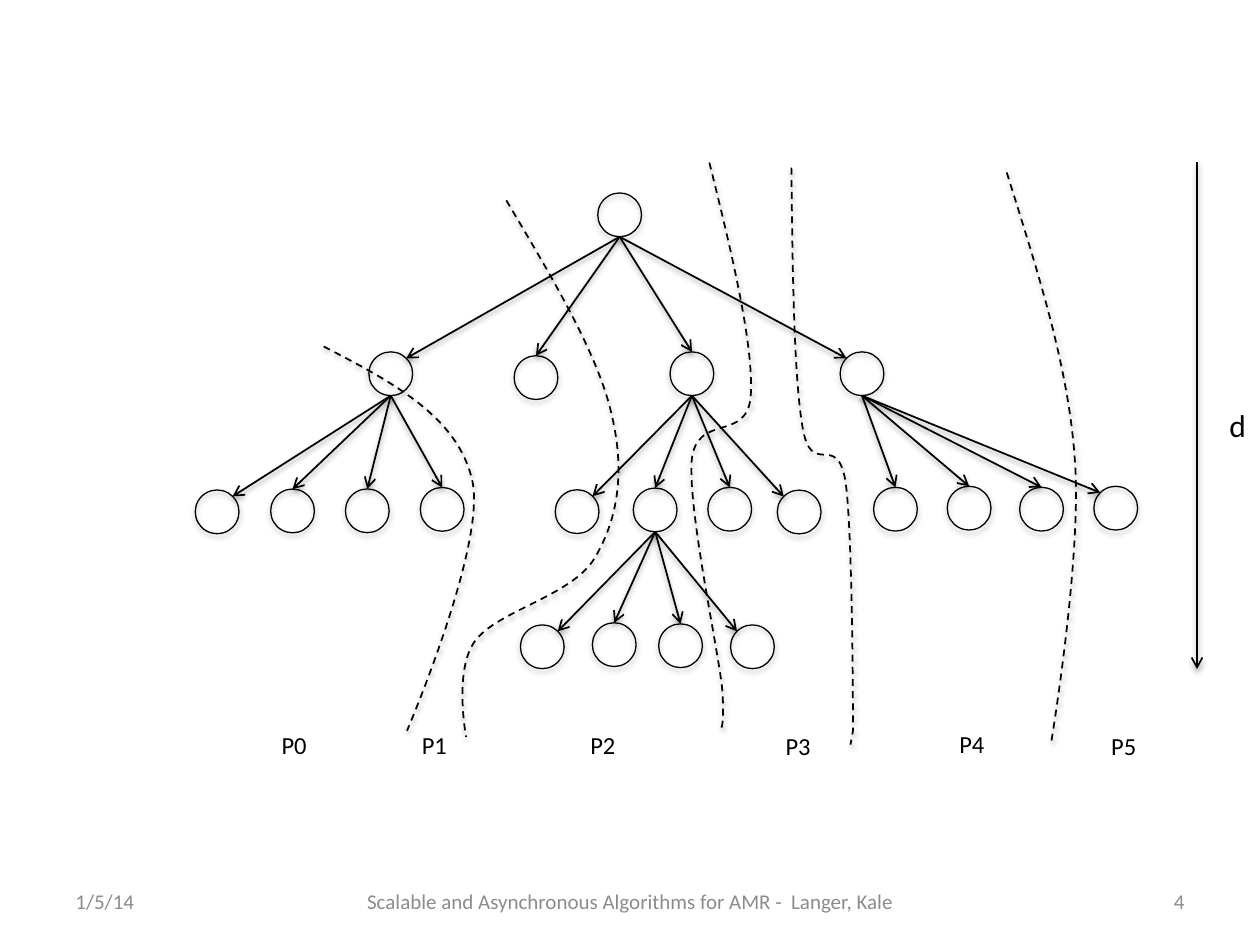
from lxml import etree
from pptx import Presentation
from pptx.dml.color import RGBColor
from pptx.enum import dml, shapes, text
from pptx.oxml import ns
from pptx.util import Pt

BLACK = RGBColor(0, 0, 0)
GRAY = RGBColor(0x8C, 0x8C, 0x8C)
DIAMETER = 25
CORNER = 3.66  # inset of the circle's 45-degree point from its bounding box

# Each node: left, top, side where its arrow lands (-1 left, 0 top, 1 right), children
TREE = (341.6, 110.3, 0, [
    (210.8, 201.1, 1, [
        (111.6, 280, 1, []), (154.7, 279.5, 0, []),
        (197.4, 279.4, 0, []), (240.2, 278.6, 0, [])]),
    (293.8, 203.3, 0, []),
    (382.9, 201.1, 0, [
        (317.3, 279.9, 1, []),
        (361.9, 278.9, 0, [
            (297.4, 357.1, 1, []), (338.5, 355.9, 0, []),
            (376.4, 356.5, 0, []), (417.5, 357.1, -1, [])]),
        (404.5, 278.5, 0, []), (444.2, 280.1, -1, [])]),
    (480.1, 201.1, -1, [
        (499.2, 278.5, 0, []), (541.3, 277.9, 0, []),
        (582.7, 278.5, 0, []), (625.1, 277.9, -1, [])]),
])

# Each boundary: box (left, top, width, height), start point, then segments:
# three points make a curve (two controls and the end), one point makes a line
BOUNDARIES = [
    ((185, 198, 86.4, 219.6), (185, 198), [
        [(224.1, 218.2), (262.1, 238.3), (270, 275)],
        [(277.9, 311.8), (232.6, 417.6), (232.6, 417.6)]]),
    ((264.2, 114.5, 89.3, 306.4), (289.4, 114.5), [
        [(315.4, 158.4), (341.3, 201.6), (349.2, 235.4)],
        [(357.8, 270), (352.8, 297.4), (339.8, 319)],
        [(326.9, 340.6), (283.7, 349.2), (271.4, 366.5)],
        [(259.2, 383), (266.4, 421.2), (266.4, 421.2)],
        [(266.4, 421.2)], [(266.4, 421.2)]]),
    ((395.3, 92.9, 33.8, 325.4), (405.4, 92.9), [
        [(418.3, 144.7), (430.6, 196.6), (429.1, 225.4)],
        [(427.7, 253.4), (398.2, 235.4), (395.3, 262.8)],
        [(393.1, 290.9), (409.7, 367.2), (412.6, 392.4)],
        [(414.7, 418.3), (411.1, 417.6), (411.1, 417.6)]]),
    ((452.2, 95.8, 34.6, 329.8), (452.2, 95.8), [
        [(452.9, 154.8), (453.6, 214.6), (458.6, 244.1)],
        [(463.7, 274.3), (478.1, 245.5), (483.1, 275)],
        [(487.4, 303.8), (487.4, 417.6), (487.4, 417.6)],
        [(487.4, 417.6)], [(486, 425.5)]]),
    ((575.3, 98.6, 39.6, 326.2), (575.3, 98.6), [
        [(592.6, 154.1), (610.6, 208.8), (614.2, 262.8)],
        [(618.5, 317.5), (600.5, 425.5), (600.5, 425.5)]]),
]

LEFT, CENTER, RIGHT = text.PP_ALIGN.LEFT, text.PP_ALIGN.CENTER, text.PP_ALIGN.RIGHT
TOP, MIDDLE = text.MSO_ANCHOR.TOP, text.MSO_ANCHOR.MIDDLE
# Each text: wording, left, top, width, height, size, colour, alignment, anchor
TEXTS = [
    ("1/5/14", 36, 500.5, 168, 28.8, 12, GRAY, LEFT, MIDDLE),
    ("Scalable and Asynchronous Algorithms for AMR -  Langer, Kale",
     163.7, 500.5, 393, 28.8, 12, GRAY, CENTER, MIDDLE),
    ("4", 516, 500.5, 168, 28.8, 12, GRAY, RIGHT, MIDDLE),
]
for i, (x, y) in enumerate([(151.2, 413.8), (231.3, 413.8), (327.6, 413.8),
                            (439.2, 414.1), (538.5, 413.1), (625.3, 414.1)]):
    TEXTS.append((f"P{i}", x, y, 33.8, 24.5, 14, BLACK, CENTER, TOP))
TEXTS.append(("d", 695.5, 228.2, 17.3, 29, 18, BLACK, LEFT, TOP))


def outline(sp, width, alpha=38, distance=1.6):
    """Give a shape or connector a black line and a soft shadow below it."""
    sp.line.color.rgb = BLACK
    sp.line.width = Pt(width)
    effects = etree.SubElement(sp._element.spPr, ns.qn("a:effectLst"))
    shadow = etree.SubElement(effects, ns.qn("a:outerShdw"), blurRad=str(Pt(3.1)),
                              dist=str(Pt(distance)), dir="5400000", rotWithShape="0")
    color = etree.SubElement(shadow, ns.qn("a:srgbClr"), val=str(BLACK))
    etree.SubElement(color, ns.qn("a:alpha"), val=str(alpha * 1000))


def arrow(x1, y1, x2, y2):
    cx = s.shapes.add_connector(shapes.MSO_CONNECTOR.STRAIGHT,
                                Pt(x1), Pt(y1), Pt(x2), Pt(y2))
    outline(cx, 1)
    etree.SubElement(cx.line._get_or_add_ln(), ns.qn("a:tailEnd"), type="arrow")


prs = Presentation()
prs.slide_width, prs.slide_height = Pt(720), Pt(540)
s = prs.slides.add_slide(prs.slide_layouts[6])

# Tree nodes with arrows to their children
pending = [TREE]
while pending:
    left, top, _, children = pending.pop(0)
    node = s.shapes.add_shape(shapes.MSO_SHAPE.OVAL, Pt(left), Pt(top),
                              Pt(DIAMETER), Pt(DIAMETER))
    node.fill.background()
    outline(node, 0.75, alpha=35, distance=1.8)
    for x, y, side, _ in children:
        reach = DIAMETER / 2 - CORNER
        arrow(left + DIAMETER / 2, top + DIAMETER,
              x + DIAMETER / 2 + side * reach, y + CORNER * abs(side))
    pending += children

# Dashed boundaries between processors
for (left, top, width, height), start, segments in BOUNDARIES:
    builder = s.shapes.build_freeform(Pt(start[0]), Pt(start[1]))
    builder.add_line_segments([(Pt(seg[-1][0]), Pt(seg[-1][1])) for seg in segments],
                              close=False)
    sp = builder.convert_to_shape()
    sp.left, sp.top, sp.width, sp.height = Pt(left), Pt(top), Pt(width), Pt(height)
    # Redraw the outline with curves, measured from the corner of the box
    outline_path = next(sp._element.iter(ns.qn("a:path")))
    outline_path.set("w", str(Pt(width)))
    outline_path.set("h", str(Pt(height)))
    for child in list(outline_path):
        outline_path.remove(child)
    for i, seg in enumerate([[start]] + segments):
        tag = "a:moveTo" if i == 0 else "a:cubicBezTo" if len(seg) == 3 else "a:lnTo"
        move = etree.SubElement(outline_path, ns.qn(tag))
        for x, y in seg:
            etree.SubElement(move, ns.qn("a:pt"), x=str(Pt(x - left)), y=str(Pt(y - top)))
    sp.fill.background()
    outline(sp, 1)
    sp.line.dash_style = dml.MSO_LINE.DASH

# Depth axis
arrow(684, 92.7, 684, 382.3)

for words, x, y, w, h, size, color, align, anchor in TEXTS:
    tf = s.shapes.add_textbox(Pt(x), Pt(y), Pt(w), Pt(h)).text_frame
    tf.word_wrap = color == GRAY
    tf.vertical_anchor = anchor
    tf.text = words
    p = tf.paragraphs[0]
    p.alignment = align
    font = p.runs[0].font
    font.name, font.size = "Calibri", Pt(size)
    font.color.rgb = color

prs.save("out.pptx")
